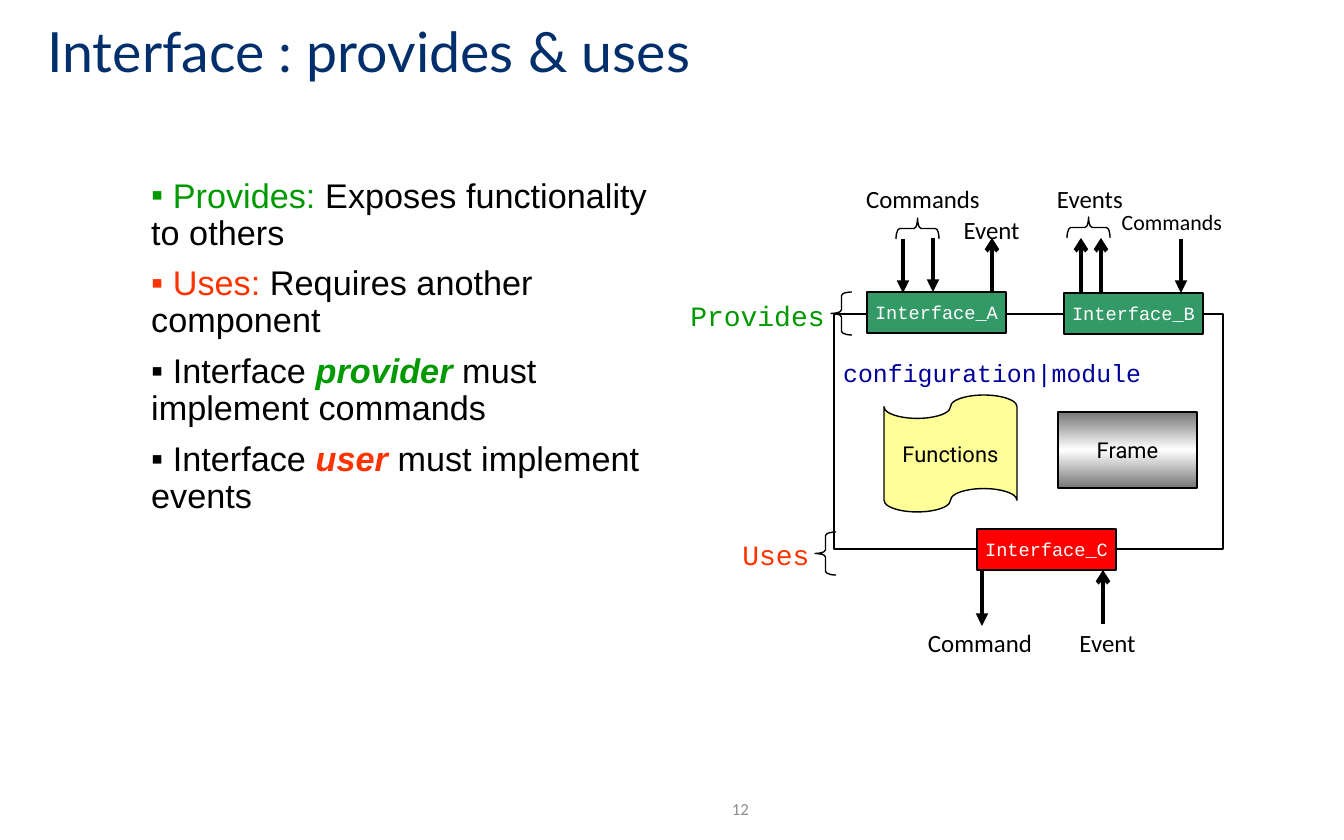
"""Builds the slide on interfaces that a component provides and uses."""
from lxml.etree import SubElement
from pptx import Presentation
from pptx.dml.color import RGBColor
from pptx.enum.shapes import MSO_CONNECTOR, MSO_SHAPE
from pptx.enum.text import MSO_ANCHOR, PP_ALIGN
from pptx.oxml import parse_xml
from pptx.oxml.ns import nsdecls, qn
from pptx.util import Pt

PX = 914400 / 134.4
COLORS = {
    "navy": "002F6C", "green": "009900", "orange": "FF3300", "blue": "000099",
    "black": "000000", "white": "FFFFFF", "gray": "8C8C8C", "steel": "767676",
    "provided": "339966", "used": "FF0000", "paper": "FFFF99",
}
TITLE = "Interface : provides & uses"
POINTS = [
    [(" Provides: ", "green", False), ("Exposes functionality to others", "black", False)],
    [(" Uses: ", "orange", False), ("Requires another component", "black", False)],
    [(" Interface ", "black", False), ("provider", "green", True),
     (" must implement commands", "black", False)],
    [(" Interface ", "black", False), ("user", "orange", True),
     (" must implement events", "black", False)],
]
MODULE = (834, 314, 389, 235)
INTERFACES = [
    ("Interface_A", 867, 292, "provided"),
    ("Interface_B", 1064, 293, "provided"),
    ("Interface_C", 977, 529, "used"),
]
INTERFACE_SIZE = (139, 41)
PARTS = [
    ("Frame", MSO_SHAPE.RECTANGLE, (1058, 412, 139, 76), None),
    ("Functions", MSO_SHAPE.FLOWCHART_PUNCHED_TAPE, (884, 395, 133, 117), "paper"),
]
ARROWS = [
    (903, 239, 293, "triangle"), (933, 238, 292, "triangle"),
    (982, 571, 626, "triangle"), (1181, 239, 293, "triangle"),
    (1103, 624, 570, "arrow"), (1101, 293, 238, "arrow"),
    (1081, 293, 238, "arrow"), (992, 293, 238, "arrow"),
]
BRACES = [(815, 532, 0), (831, 292, 0), (907, 207, 90), (1078, 206, 90)]
BRACE_SIZE = (21, 43)
LABELS = [
    ("Provides", (676, 292, 163, 47), "Courier New", 15, "green"),
    ("Uses", (728, 531, 96, 47), "Courier New", 15, "orange"),
    ("configuration|module", (828, 351, 329, 44), "Courier New", 13.3, "blue"),
    ("Commands", (849, 177, 148, 44), "Calibri", 13.3, "black"),
    ("Events", (1043, 177, 94, 44), "Calibri", 13.3, "black"),
    ("Event", (950, 208, 83, 44), "Calibri", 13.3, "black"),
    ("Commands", (1105, 202, 134, 44), "Calibri", 11.7, "black"),
    ("Command", (914, 621, 132, 44), "Calibri", 13.3, "black"),
    ("Event", (1066, 621, 83, 44), "Calibri", 13.3, "black"),
]


def emu(*lengths):
    return [round(n * PX) for n in lengths]


def rgb(name):
    return RGBColor.from_string(COLORS[name])


def add_run(p, text, font, size, color, strong=False):
    r = p.add_run()
    r.text = text
    r.font.name, r.font.size = font, Pt(size)
    r.font.color.rgb = rgb(color)
    r.font.bold = r.font.italic = strong


def write(sp, text, font, size, color, align=PP_ALIGN.CENTER, anchor=MSO_ANCHOR.MIDDLE, wrap=False):
    tf = sp.text_frame
    tf.word_wrap, tf.vertical_anchor = wrap, anchor
    p = tf.paragraphs[0]
    p.alignment = align
    add_run(p, text, font, size, color)
    return p


def add_outline(s, kind, box, fill=None):
    sp = s.shapes.add_shape(kind, *emu(*box))
    sp.shadow.inherit = False
    sp.line.color.rgb, sp.line.width = rgb("black"), Pt(0.75)
    if fill:
        sp.fill.solid()
        sp.fill.fore_color.rgb = rgb(fill)
    else:
        sp.fill.background()
    return sp


def add_sheen(sp):
    stops = "".join(
        f'<a:gs pos="{pos}"><a:srgbClr val="{COLORS[c]}"/></a:gs>'
        for pos, c in ((0, "steel"), (50000, "white"), (100000, "steel")))
    grad = parse_xml(f'<a:gradFill {nsdecls("a")}><a:gsLst>{stops}</a:gsLst>'
                     '<a:lin ang="5400000" scaled="0"/></a:gradFill>')
    plain = sp._element.spPr.find(qn("a:noFill"))
    plain.getparent().replace(plain, grad)


def add_arrow(s, x, start, end, head):
    line = s.shapes.add_connector(MSO_CONNECTOR.STRAIGHT, *emu(x, start, x, end))
    line.line.color.rgb, line.line.width = rgb("black"), Pt(2.25)
    SubElement(line.line._get_or_add_ln(), qn("a:tailEnd"), type=head)
    SubElement(line._element.spPr, qn("a:effectLst"))


def add_points(s):
    tf = s.shapes.add_textbox(*emu(138, 172, 530, 558)).text_frame
    tf.word_wrap = True
    for i, runs in enumerate(POINTS):
        p = tf.add_paragraph() if i else tf.paragraphs[0]
        p.line_spacing, p.space_before = 0.9, Pt(7.5 if i else 0)
        pPr = p._p.get_or_add_pPr()
        pPr.set("marL", "0")
        pPr.set("indent", "0")
        SubElement(pPr, qn("a:buFont"), typeface="Arial")
        SubElement(pPr, qn("a:buChar"), char="▪")
        for text, color, strong in runs:
            add_run(p, text, "Arial", 18.3, color, strong)


def main():
    prs = Presentation()
    prs.slide_width, prs.slide_height = emu(1344, 840)
    s = prs.slides.add_slide(prs.slide_layouts[6])

    title = s.shapes.add_textbox(*emu(34, 19, 1210, 71))
    write(title, TITLE, "Lato", 29.7, "navy", PP_ALIGN.LEFT, wrap=True).line_spacing = 0.9
    add_points(s)

    add_outline(s, MSO_SHAPE.RECTANGLE, MODULE)
    for name, x, y, fill in INTERFACES:
        sp = add_outline(s, MSO_SHAPE.RECTANGLE, (x, y, *INTERFACE_SIZE), fill)
        write(sp, name, "Courier New", 10, "white")
    for name, kind, box, fill in PARTS:
        sp = add_outline(s, kind, box, fill)
        write(sp, name, "Roboto", 11.7, "black")
        if not fill:
            add_sheen(sp)
    for arrow in ARROWS:
        add_arrow(s, *arrow)
    for x, y, turn in BRACES:
        sp = add_outline(s, MSO_SHAPE.LEFT_BRACE, (x, y, *BRACE_SIZE))
        sp.adjustments[0], sp.rotation = 0.17, turn
    for text, box, font, size, color in LABELS:
        sp = s.shapes.add_textbox(*emu(*box))
        write(sp, text, font, size, color, anchor=MSO_ANCHOR.TOP)

    number = s.shapes.add_textbox(*emu(583, 792, 179, 34))
    write(number, "12", "Calibri", 9, "gray", PP_ALIGN.RIGHT, wrap=True)
    prs.save("out.pptx")


if __name__ == "__main__":
    main()
